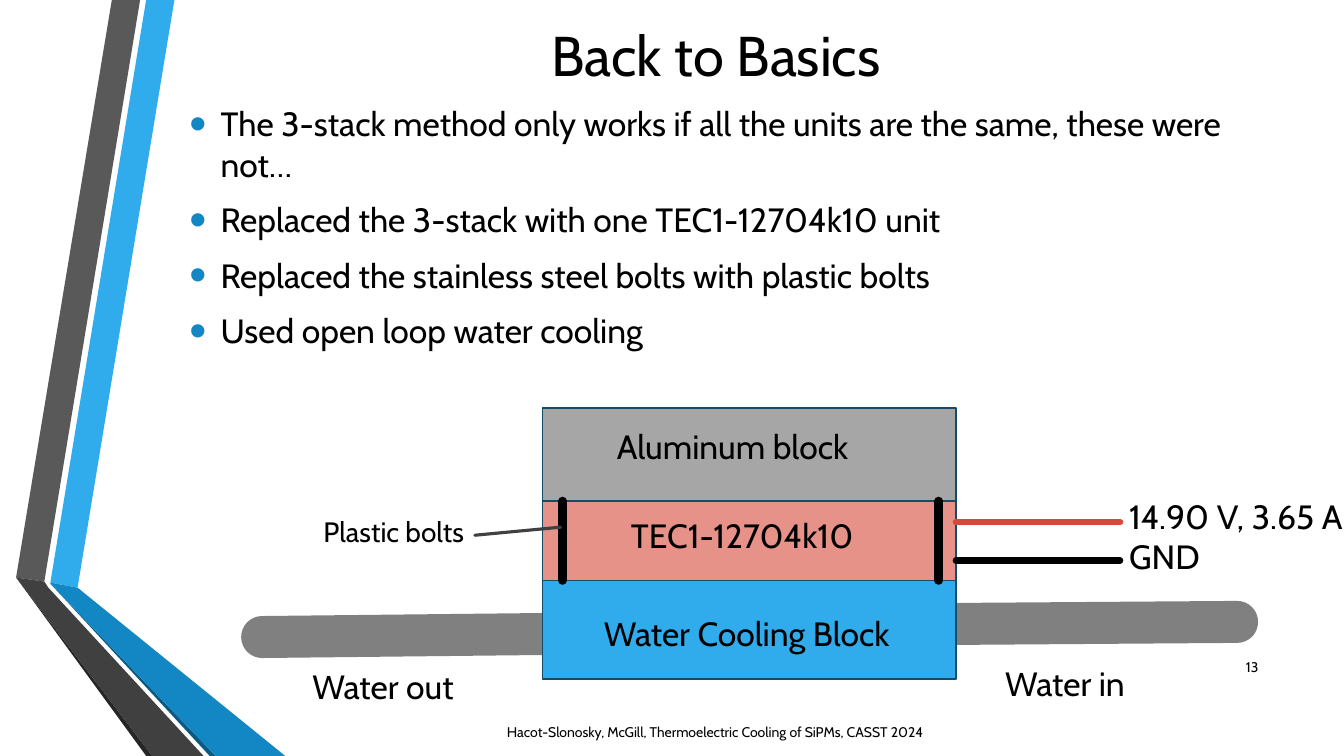
import pptx
import pptx.dml.color
import pptx.enum.shapes
import pptx.enum.text
import pptx.oxml
import pptx.oxml.ns
import pptx.util
from pptx.util import Inches, Pt

RGB = pptx.dml.color.RGBColor
BLACK = RGB(0x00, 0x00, 0x00)
DARK_GREY = RGB(0x40, 0x40, 0x40)
PIPE_GREY = RGB(0x80, 0x80, 0x80)
ALUMINUM_GREY = RGB(0xA6, 0xA6, 0xA6)
TEC_PINK = RGB(0xE6, 0x92, 0x89)
WIRE_RED = RGB(0xD6, 0x4A, 0x3B)
SKY_BLUE = RGB(0x30, 0xAC, 0xEC)
MID_BLUE = RGB(0x12, 0x87, 0xC3)
OUTLINE_BLUE = RGB(0x15, 0x4B, 0x67)
FONT = "Cabin"

ALIGN = pptx.enum.text.PP_ALIGN
TOP = pptx.enum.text.MSO_ANCHOR.TOP
MIDDLE = pptx.enum.text.MSO_ANCHOR.MIDDLE

RIBBONS = [
    (SKY_BLUE, [(0.5, 5.78), (0.77, 5.83), (1.73, 0), (1.45, 0)]),
    (RGB(0x59, 0x59, 0x59), [(1.39, 0), (1.11, 0), (0.16, 5.73), (0.44, 5.77)]),
    (RGB(0x26, 0x26, 0x26), [(0.16, 5.73), (1.45, 7.5), (1.51, 7.5)]),
    (RGB(0x0C, 0x5A, 0x82), [(0.5, 5.79), (2.08, 7.5), (2.14, 7.5)]),
    (MID_BLUE, [(0.5, 5.79), (2.14, 7.5), (2.83, 7.5), (0.77, 5.83), (0.5, 5.78)]),
    (DARK_GREY, [(2.02, 7.5), (0.48, 5.83), (0.44, 5.77), (0.16, 5.73), (1.51, 7.5)]),
]

TITLE = "Back to Basics"
POINTS = [
    "The 3-stack method only works if all the units are the same, these were not…",
    "Replaced the 3-stack with one TEC1-12704k10 unit",
    "Replaced the stainless steel bolts with plastic bolts",
    "Used open loop water cooling",
]

# The stack, from the top down: height, fill
STACK_LEFT, STACK_TOP, STACK_WIDTH = 5.38, 4.05, 4.1
STACK_RIGHT = STACK_LEFT + STACK_WIDTH
STACK = [(0.92, ALUMINUM_GREY), (0.79, TEC_PINK), (0.98, SKY_BLUE)]
TEC_TOP = STACK_TOP + STACK[0][0]
TEC_BOTTOM = TEC_TOP + STACK[1][0]

# Lines: start, end, colour, width in points
PIPES = [
    ((2.6, 6.32), (STACK_LEFT, 6.29), PIPE_GREY, 30),
    ((STACK_RIGHT, 6.19), (12.27, 6.17), PIPE_GREY, 30),
]
BOLTS = [((x, TEC_TOP), (x, TEC_BOTTOM), BLACK, 6) for x in (5.58, 9.31)]
WIRES = [
    ((STACK_RIGHT, y), (11.11, y), colour, 4.5)
    for y, colour in ((5.18, WIRE_RED), (5.56, BLACK))
]
BOLT_POINTER = ((5.56, 5.23), (4.71, 5.31), DARK_GREY, 2.25)

# Labels: text, box (left, top, width, height), size, alignment, anchor
LABELS = [
    (TITLE, (1.62, -0.42, 10.96, 1.92), 40, ALIGN.CENTER, MIDDLE),
    ("Aluminum block", (6.02, 4.18, 2.93, 0.5), 24, ALIGN.LEFT, TOP),
    ("TEC1-12704k10", (6.16, 5.06, 2.56, 0.5), 24, ALIGN.LEFT, TOP),
    ("Water Cooling Block", (5.89, 6.03, 3.24, 0.5), 24, ALIGN.LEFT, TOP),
    ("14.90 V, 3.65 A", (11.1, 4.87, 2.56, 0.5), 24, ALIGN.LEFT, TOP),
    ("GND", (11.1, 5.27, 2.56, 0.5), 24, ALIGN.LEFT, TOP),
    ("Water in", (9.87, 6.53, 2.56, 0.5), 24, ALIGN.LEFT, TOP),
    ("Water out", (3, 6.56, 2.56, 0.5), 24, ALIGN.LEFT, TOP),
    ("Plastic bolts", (3.11, 5.06, 1.98, 0.44), 20, ALIGN.LEFT, TOP),
    ("13", (11.98, 6.42, 0.6, 0.4), 10, ALIGN.RIGHT, MIDDLE),
    ("Hacot-Slonosky, McGill, Thermoelectric Cooling of SiPMs, CASST 2024",
     (4.93, 7.06, 7.75, 0.4), 10, ALIGN.LEFT, MIDDLE),
]


def add_child(parent, tag, **attributes):
    child = pptx.oxml.ns.qn(tag)
    element = parent.makeelement(child, attributes)
    parent.append(element)
    return element


def add_ribbon(slide, colour, corners):
    points = [(Inches(x), Inches(y)) for x, y in corners]
    builder = slide.shapes.build_freeform(*points[0])
    builder.add_line_segments(points[1:], close=True)
    ribbon = builder.convert_to_shape()
    ribbon.shadow.inherit = False
    ribbon.fill.solid()
    ribbon.fill.fore_color.rgb = colour
    ribbon.line.fill.background()


def add_line(slide, start, end, colour, width):
    """Draw a straight line with round ends and no shadow."""
    line = slide.shapes.add_connector(
        pptx.enum.shapes.MSO_CONNECTOR.STRAIGHT,
        *(Inches(value) for value in start + end))
    line.line.color.rgb = colour
    line.line.width = Pt(width)
    line.line._get_or_add_ln().set("cap", "rnd")
    add_child(line._element.spPr, "a:effectLst")


def add_block(slide, top, height, colour):
    block = slide.shapes.add_shape(
        pptx.enum.shapes.MSO_SHAPE.RECTANGLE,
        Inches(STACK_LEFT), Inches(top), Inches(STACK_WIDTH), Inches(height))
    block.shadow.inherit = False
    block.fill.solid()
    block.fill.fore_color.rgb = colour
    block.line.color.rgb = OUTLINE_BLUE
    block.line.width = Pt(1.25)


def add_text(slide, lines, box, size, align, anchor):
    """Add a text box with one paragraph a line and return its paragraphs."""
    frame = slide.shapes.add_textbox(*(Inches(value) for value in box)).text_frame
    frame.word_wrap = True
    frame.vertical_anchor = anchor
    for number, line in enumerate(lines):
        paragraph = frame.add_paragraph() if number else frame.paragraphs[0]
        paragraph.alignment = align
        run = paragraph.add_run()
        run.text = line
        run.font.name = FONT
        run.font.size = Pt(size)
        run.font.color.rgb = BLACK
    return frame.paragraphs


def add_bullet(paragraph):
    paragraph.space_before = Pt(4.8)
    paragraph.space_after = Pt(6)
    properties = paragraph._p.get_or_add_pPr()
    properties.set("marL", str(Inches(0.31)))
    properties.set("indent", str(-Inches(0.31)))
    add_child(add_child(properties, "a:buClr"), "a:srgbClr", val=str(MID_BLUE))
    add_child(properties, "a:buSzPct", val="145000")
    add_child(properties, "a:buFont", typeface="Arial")
    add_child(properties, "a:buChar", char="•")


def main():
    deck = pptx.Presentation()
    deck.slide_width, deck.slide_height = Inches(13.33), Inches(7.5)
    slide = deck.slides.add_slide(deck.slide_layouts[6])

    for colour, corners in RIBBONS:
        add_ribbon(slide, colour, corners)
    for pipe in PIPES:
        add_line(slide, *pipe)

    top = STACK_TOP
    for height, colour in STACK:
        add_block(slide, top, height, colour)
        top += height
    for line in BOLTS + WIRES + [BOLT_POINTER]:
        add_line(slide, *line)

    for text, *layout in LABELS:
        add_text(slide, [text], *layout)
    for point in add_text(slide, POINTS, (1.78, 0.54, 11.08, 3.42), 24, ALIGN.LEFT, MIDDLE):
        add_bullet(point)

    deck.save("out.pptx")


if __name__ == "__main__":
    main()
